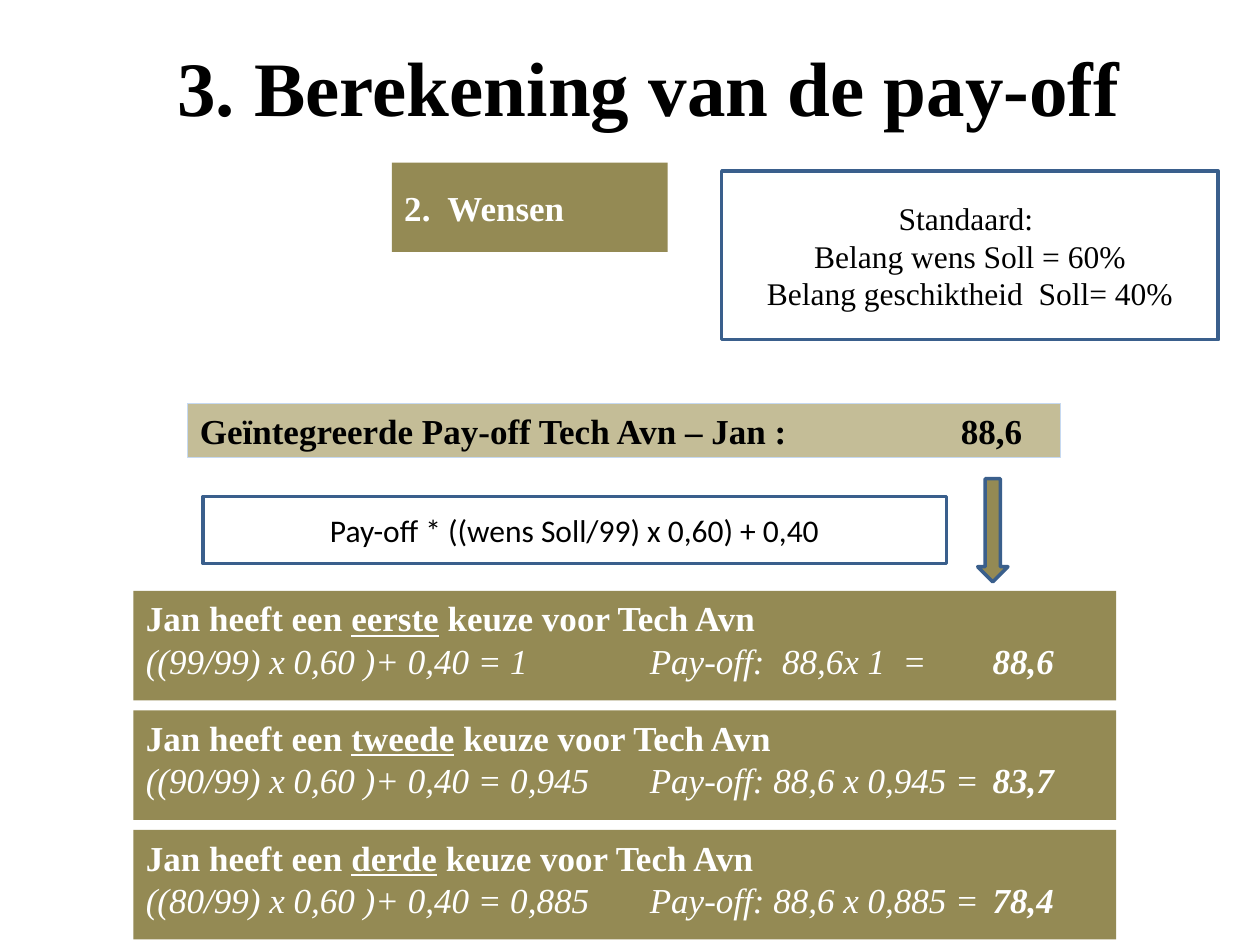
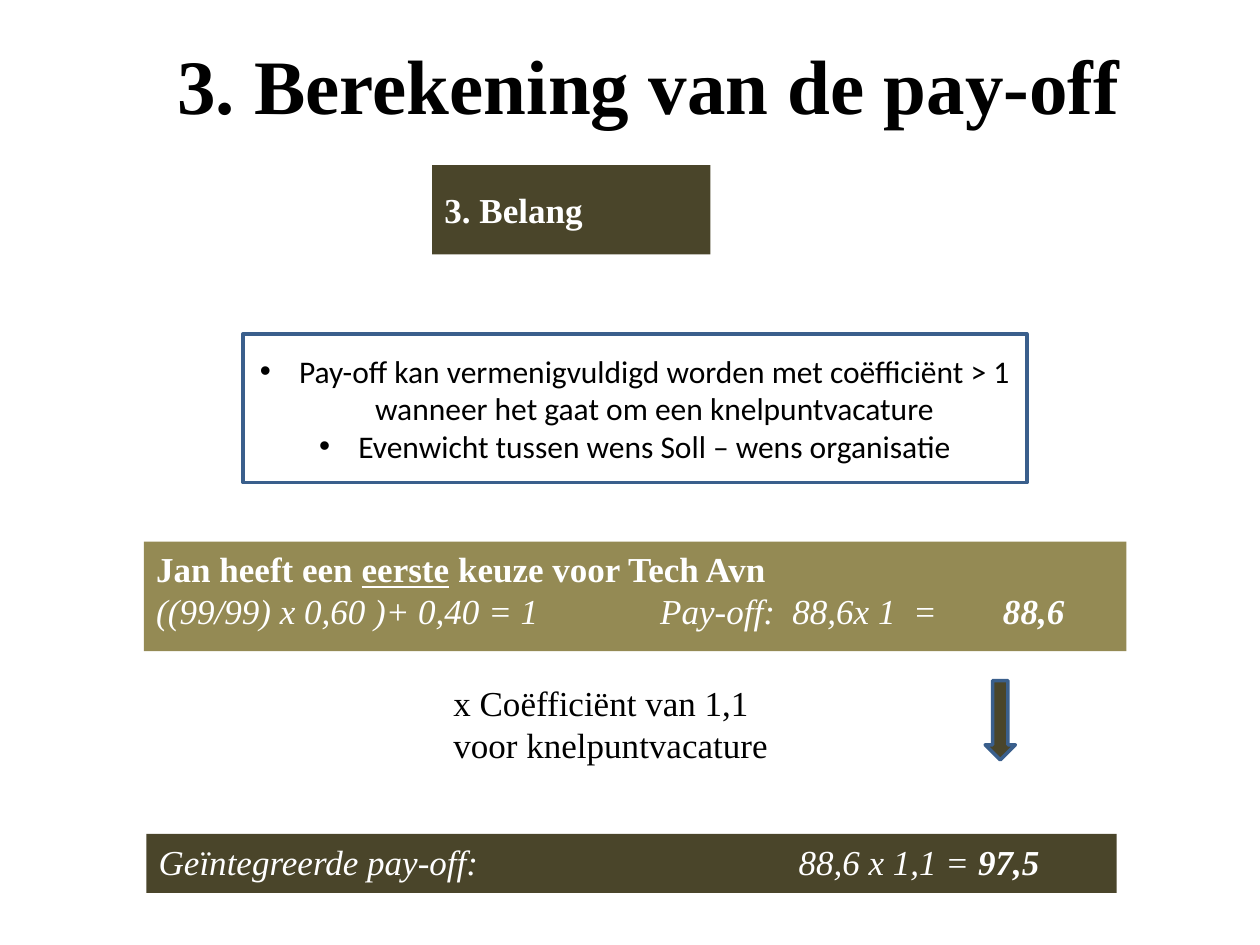
import pptx
import pptx.util
import pptx.dml.color
import pptx.enum.shapes
import pptx.enum.text
import pptx.oxml.ns
from lxml import etree

Cm, Pt = pptx.util.Cm, pptx.util.Pt
SHAPE = pptx.enum.shapes.MSO_SHAPE
ANCHOR = pptx.enum.text.MSO_ANCHOR
ALIGN = pptx.enum.text.PP_ALIGN
qn = pptx.oxml.ns.qn

# Content: a paragraph is a list of (text, style), style letters b, i, u
TITLE = "3. Berekening van de pay-off"
CHOICES = [
    ("eerste", "((99/99) x 0,60 )+ 0,40 = 1", "Pay-off:  88,6x 1  =", "88,6"),
    ("tweede", "((90/99) x 0,60 )+ 0,40 = 0,945", "Pay-off: 88,6 x 0,945 =", "83,7"),
    ("derde", "((80/99) x 0,60 )+ 0,40 = 0,885", "Pay-off: 88,6 x 0,885 =", "78,4"),
]
WISHES = [[("2.  Wensen", "b")]]
STANDARD = [[("Standaard: ", "")], [("Belang wens Soll = 60%", "")],
            [("Belang geschiktheid  Soll= 40%", "")]]
INTEGRATED = [[("Geïntegreerde Pay-off Tech Avn – Jan :\t88,6", "b")]]
FORMULA = [[("Pay-off * ((wens Soll/99) x 0,60) + 0,40", "")]]
IMPORTANCE = [[("3. Belang", "b")]]
BULLETS = [
    [("Pay-off kan vermenigvuldigd worden met coëfficiënt > 1 "
      "wanneer het gaat om een knelpuntvacature", "")],
    [("Evenwicht tussen wens Soll – wens organisatie", "")],
]
COEFFICIENT = [[("x Coëfficiënt van 1,1", "")], [("voor knelpuntvacature", "")]]
RESULT = [[("Geïntegreerde pay-off:\t88,6 x 1,1 = ", "i"), ("97,5", "bi")]]

# Shared look
COLORS = {"olive": "948A54", "dark": "4A452A", "sand": "C4BD97", "blue": "3A5F8C",
          "pale": "C6D9F1", "white": "FFFFFF", "black": "000000"}
SERIF, SANS = "Times New Roman", "Calibri"
CHOICE_SIZE, CHOICE_STEP = (19.81, 2.21), 2.41
CHOICE_TABS = (10.16, 17.07)


def rgb(name):
    return pptx.dml.color.RGBColor.from_string(COLORS[name])


def place(sp, left, top, width, height):
    sp.left, sp.top, sp.width, sp.height = map(Cm, (left, top, width, height))


def paint(sp, fill, line=None, weight=2):
    sp.fill.solid()
    sp.fill.fore_color.rgb = rgb(fill)
    if line:
        sp.line.color.rgb = rgb(line)
        sp.line.width = Pt(weight)
    else:
        sp.line.fill.background()


def add_tabs(p, stops):
    tabs = etree.SubElement(p._p.get_or_add_pPr(), qn("a:tabLst"))
    for stop in stops:
        etree.SubElement(tabs, qn("a:tab"), pos=str(Cm(stop)), algn="l")


def add_bullet(p, indent=0.79):
    pPr = p._p.get_or_add_pPr()
    pPr.set("marL", str(Cm(indent)))
    pPr.set("indent", str(-Cm(indent)))
    etree.SubElement(pPr, qn("a:buFont"), typeface="Arial")
    etree.SubElement(pPr, qn("a:buChar"), char="•")


def write(sp, paragraphs, size=20, color="white", font=SERIF, align=ALIGN.LEFT,
          anchor=ANCHOR.MIDDLE, tabs=(), bullets=False):
    tf = sp.text_frame
    tf.word_wrap = True
    tf.auto_size = pptx.enum.text.MSO_AUTO_SIZE.NONE
    tf.vertical_anchor = anchor
    for n, runs in enumerate(paragraphs):
        p = tf.add_paragraph() if n else tf.paragraphs[0]
        p.alignment = align
        p.space_before = Pt(0)
        if bullets:
            add_bullet(p)
        if tabs:
            add_tabs(p, tabs)
        for text, style in runs:
            r = p.add_run()
            r.text = text
            r.font.name, r.font.size = font, Pt(size)
            r.font.color.rgb = rgb(color)
            r.font.bold, r.font.italic = "b" in style, "i" in style
            r.font.underline = "u" in style


def add_box(s, at, fill, paragraphs=(), line=None, weight=2, shape=SHAPE.RECTANGLE, **text):
    sp = s.shapes.add_shape(shape, *map(Cm, at))
    sp.shadow.inherit = False
    paint(sp, fill, line, weight)
    if paragraphs:
        write(sp, paragraphs, **text)


def add_arrow(s, at, fill):
    add_box(s, at, fill, line="blue", shape=SHAPE.DOWN_ARROW)


def add_choice(s, left, top, choice):
    rank, factor, payoff, value = choice
    paragraphs = [
        [("Jan heeft een ", "b"), (rank, "bu"), (" keuze voor Tech Avn", "b")],
        [(f"{factor}\t{payoff}\t", "i"), (value, "bi")],
    ]
    add_box(s, (left, top, *CHOICE_SIZE), "olive", paragraphs,
            anchor=ANCHOR.TOP, tabs=CHOICE_TABS)


def add_slide(prs, layout, title_top):
    s = prs.slides.add_slide(prs.slide_layouts[layout])
    place(s.shapes.title, 1.65, title_top, 22.86, 2.41)
    write(s.shapes.title, [[(TITLE, "b")]], size=44, color="black", align=ALIGN.CENTER)
    return s


def build_wishes(prs):
    s = add_slide(prs, 5, 0.53)
    add_box(s, (7.9, 3.28, 5.56, 1.8), "olive", WISHES)
    note = dict(line="blue", size=18, color="black", align=ALIGN.CENTER)
    add_box(s, (14.55, 3.45, 10.01, 3.4), "white", STANDARD, **note)
    add_box(s, (3.78, 8.13, 17.6, 1.09), "sand", INTEGRATED, line="pale", weight=0.75,
            color="black", anchor=ANCHOR.TOP, tabs=[15.34])
    add_box(s, (4.09, 10.01, 14.99, 1.35), "white", FORMULA, font=SANS, **note)
    add_arrow(s, (19.71, 9.65, 0.61, 2.08), "olive")
    for n, choice in enumerate(CHOICES):
        add_choice(s, 2.69, 11.91 + n * CHOICE_STEP, choice)


def build_importance(prs):
    s = add_slide(prs, 1, 0.48)
    add_box(s, (8.71, 3.33, 5.61, 1.8), "dark", IMPORTANCE)
    # Bulleted list in the body placeholder
    body = s.placeholders[1]
    place(body, 4.9, 6.73, 15.8, 3)
    paint(body, "white", "blue")
    write(body, BULLETS, size=18, color="black", font=SANS, align=ALIGN.CENTER, bullets=True)
    # From first choice to final pay-off
    add_choice(s, 2.9, 10.92, CHOICES[0])
    add_box(s, (8.89, 13.64, 8.84, 1.88), "white", COEFFICIENT, color="black")
    add_arrow(s, (19.86, 13.72, 0.61, 1.6), "dark")
    add_box(s, (2.95, 16.81, 19.56, 1.19), "dark", RESULT, anchor=ANCHOR.TOP, tabs=[12.9])


def main():
    prs = pptx.Presentation()
    prs.slide_width, prs.slide_height = Cm(25.4), Cm(19.05)
    build_wishes(prs)
    build_importance(prs)
    prs.save("out.pptx")


if __name__ == "__main__":
    main()
